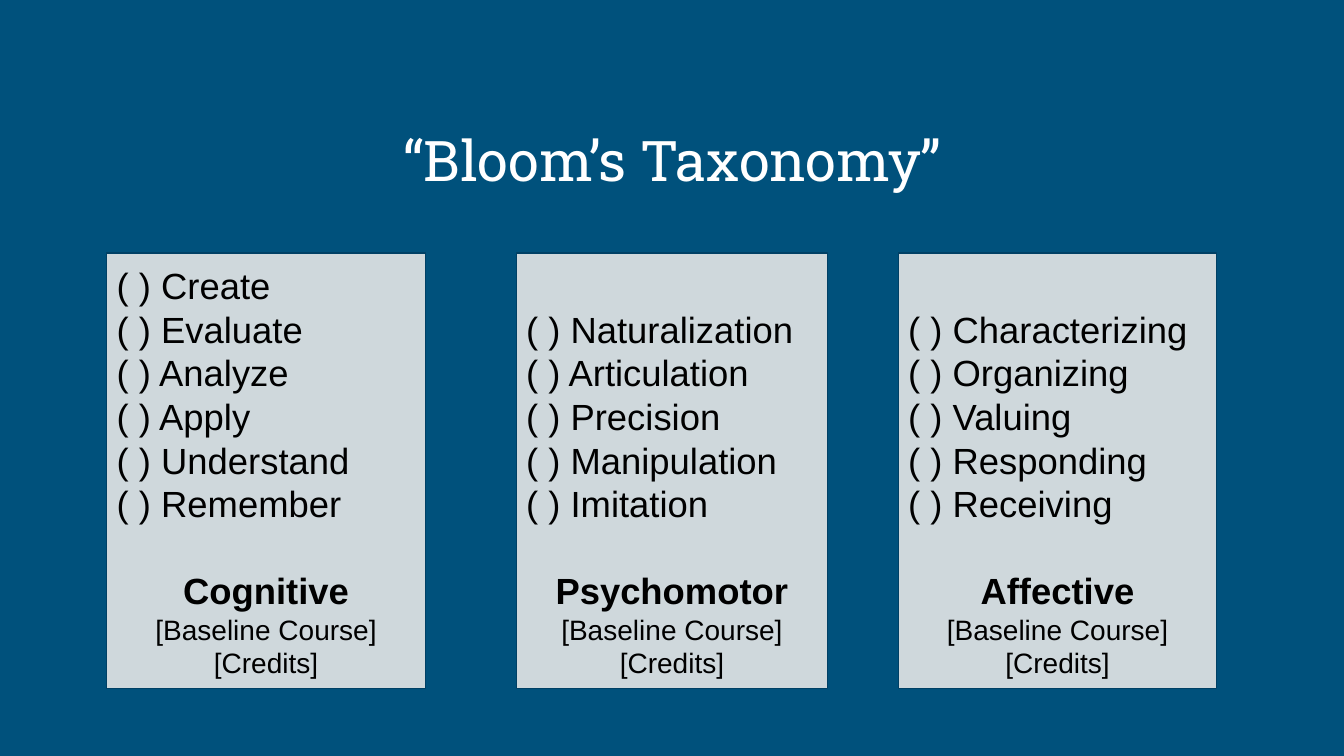
from pptx import Presentation
from pptx import util as u
from pptx.dml.color import RGBColor
from pptx.enum import shapes, text

WIDTH, HEIGHT = 13.33, 7.5
COLOURS = {"back": "00517C", "panel": "CFD8DC", "edge": "004065",
           "title": "FFFFFF", "body": "000000"}
TITLE = "“Bloom’s Taxonomy”"
TITLE_BOX = (0.92, 0.9, 11.5, 1.45)
PANEL_TOP, PANEL_HEIGHT = 2.51, 4.32
FOOTER = ["[Baseline Course]", "[Credits]"]
# name, left, width, levels from highest to lowest
DOMAINS = [
    ("Cognitive", 1.06, 3.16,
     ["Create", "Evaluate", "Analyze", "Apply", "Understand", "Remember"]),
    ("Psychomotor", 5.12, 3.09,
     ["Naturalization", "Articulation", "Precision", "Manipulation", "Imitation"]),
    ("Affective", 8.91, 3.16,
     ["Characterizing", "Organizing", "Valuing", "Responding", "Receiving"]),
]
LEFT, CENTER = text.PP_ALIGN.LEFT, text.PP_ALIGN.CENTER
LEVEL = {"alignment": LEFT}
HEADING = {"alignment": CENTER, "space_before": u.Pt(31)}
NOTE = {"alignment": CENTER}


def colour(name):
    return RGBColor.from_string(COLOURS[name])


def apply(target, values):
    for name, value in values.items():
        setattr(target, name, value)


def set_frame(frame, anchor, inset):
    """Wrap the text and set its anchor and its top and bottom insets."""
    apply(frame, {"word_wrap": True, "vertical_anchor": anchor,
                  "margin_left": u.Inches(0.1), "margin_right": u.Inches(0.1),
                  "margin_top": u.Inches(inset), "margin_bottom": u.Inches(inset)})


def write(frame, lines):
    """Fill a frame with (wording, paragraph format, font, size, bold, colour)."""
    for index, (words, layout, font, size, bold, ink) in enumerate(lines):
        para = frame.add_paragraph() if index else frame.paragraphs[0]
        apply(para, layout)
        span = para.add_run()
        span.text = words
        apply(span.font, {"name": font, "size": u.Pt(size), "bold": bold})
        span.font.color.rgb = colour(ink)


def add_panel(page, name, left, width, levels):
    panel = page.shapes.add_shape(
        shapes.MSO_SHAPE.RECTANGLE,
        *map(u.Inches, (left, PANEL_TOP, width, PANEL_HEIGHT)))
    panel.shadow.inherit = False
    panel.fill.solid()
    panel.fill.fore_color.rgb = colour("panel")
    panel.line.color.rgb = colour("edge")
    panel.line.width = u.Pt(0.75)
    set_frame(panel.text_frame, text.MSO_ANCHOR.BOTTOM, 0.09)
    lines = [(f"( ) {level}", LEVEL, "Arial", 26, False, "body") for level in levels]
    lines.append((name, HEADING, "Arial", 26, True, "body"))
    lines += [(note, NOTE, "Arial", 20, False, "body") for note in FOOTER]
    write(panel.text_frame, lines)


def main():
    deck = Presentation()
    deck.slide_width, deck.slide_height = u.Inches(WIDTH), u.Inches(HEIGHT)
    page = deck.slides.add_slide(deck.slide_layouts[6])
    page.background.fill.solid()
    page.background.fill.fore_color.rgb = colour("back")

    box = page.shapes.add_textbox(*map(u.Inches, TITLE_BOX))
    set_frame(box.text_frame, text.MSO_ANCHOR.MIDDLE, 0.05)
    write(box.text_frame, [(TITLE, {"alignment": CENTER, "line_spacing": 0.9},
                            "Roboto Slab", 40, False, "title")])
    for domain in DOMAINS:
        add_panel(page, *domain)
    deck.save("out.pptx")


if __name__ == "__main__":
    main()
